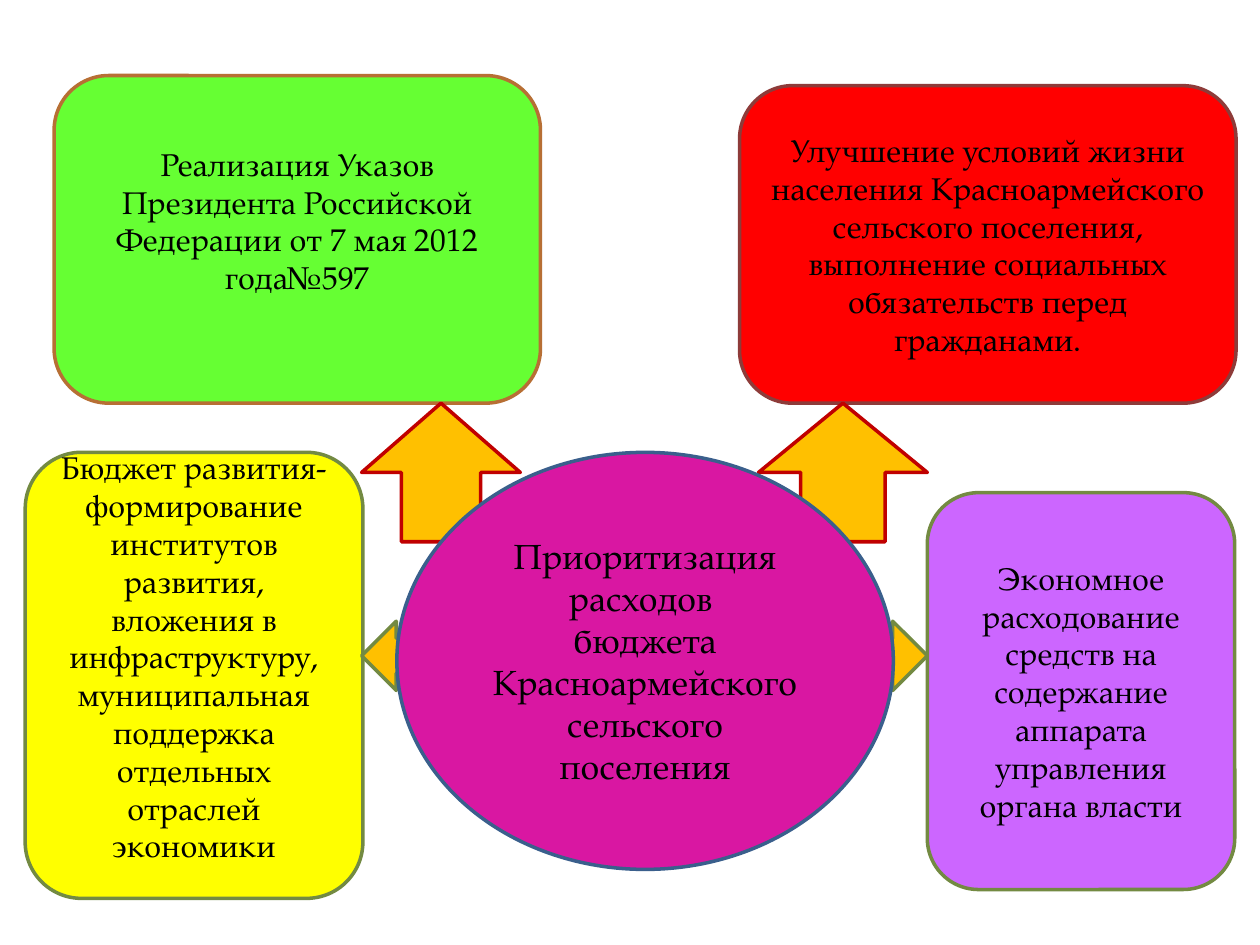
from pptx import Presentation
from pptx import util as u
from pptx.dml.color import RGBColor
from pptx.enum import shapes, text

FONT = "TeX Gyre Pagella"
KIND = shapes.MSO_SHAPE
OLIVE, DARK_RED, AMBER = "738A42", "C00000", "FFC000"

# Position, fill, outline, bottom inset, wording
BOXES = [
    ((0.43, 0.6, 3.86, 2.6), "66FF33", "B76F34", 0.35,
     "Реализация Указов Президента Российской Федерации от 7 мая 2012 года№597"),
    ((0.2, 3.59, 2.68, 3.54), "FFFF00", OLIVE, 0.35,
     "Бюджет развития-формирование институтов развития, вложения в "
     "инфраструктуру, муниципальная поддержка отдельных отраслей экономики"),
    ((7.36, 3.91, 2.44, 3.15), "CC66FF", OLIVE, 0.05,
     "Экономное расходование средств на содержание аппарата управления "
     "органа власти"),
    ((5.87, 0.68, 3.94, 2.52), "FF0000", "8E3B39", 0.05,
     "Улучшение условий жизни населения Красноармейского сельского поселения, "
     "выполнение социальных обязательств перед гражданами."),
]

ARROWS = [
    (KIND.LEFT_ARROW, (2.87, 4.93, 0.55, 0.55), OLIVE),
    (KIND.RIGHT_ARROW, (6.81, 4.93, 0.55, 0.55), OLIVE),
    (KIND.UP_ARROW, (2.87, 3.2, 1.26, 1.1), DARK_RED),
    (KIND.UP_ARROW, (6.02, 3.2, 1.34, 1.1), DARK_RED),
]

CENTRE_LINES = ["Приоритизация", "расходов ", "бюджета",
                "Красноармейского сельского поселения"]


def color(value):
    return RGBColor.from_string(value)


def apply_format(target, values):
    for name, value in values.items():
        setattr(target, name, value)


def add_figure(slide, kind, position, fill, outline):
    shape = slide.shapes.add_shape(kind, *map(u.Inches, position))
    shape.shadow.inherit = False
    shape.fill.solid()
    shape.fill.fore_color.rgb = color(fill)
    shape.line.color.rgb = color(outline)
    shape.line.width = u.Pt(2)
    return shape


def write_text(shape, lines, size, bottom_inset=0.05):
    frame = shape.text_frame
    apply_format(frame, {
        "word_wrap": True,
        "vertical_anchor": text.MSO_ANCHOR.MIDDLE,
        "margin_bottom": u.Inches(bottom_inset),
    })
    frame.text = "\n".join(lines)
    for paragraph in frame.paragraphs:
        paragraph.alignment = text.PP_ALIGN.CENTER
        for run in paragraph.runs:
            apply_format(run.font, {"name": FONT, "size": u.Pt(size)})
            run.font.color.rgb = color("000000")


def main():
    presentation = Presentation()
    apply_format(presentation, {"slide_width": u.Inches(10),
                                "slide_height": u.Inches(7.5)})
    slide = presentation.slides.add_slide(presentation.slide_layouts[6])

    for position, fill, outline, bottom_inset, wording in BOXES:
        box = add_figure(slide, KIND.ROUNDED_RECTANGLE, position, fill, outline)
        write_text(box, [wording], 18, bottom_inset)
    for kind, position, outline in ARROWS:
        add_figure(slide, kind, position, AMBER, outline)
    centre = add_figure(slide, KIND.OVAL, (3.15, 3.59, 3.94, 3.31),
                        "D917A2", "3A5F8C")
    write_text(centre, CENTRE_LINES, 20)

    presentation.save("out.pptx")


if __name__ == "__main__":
    main()
